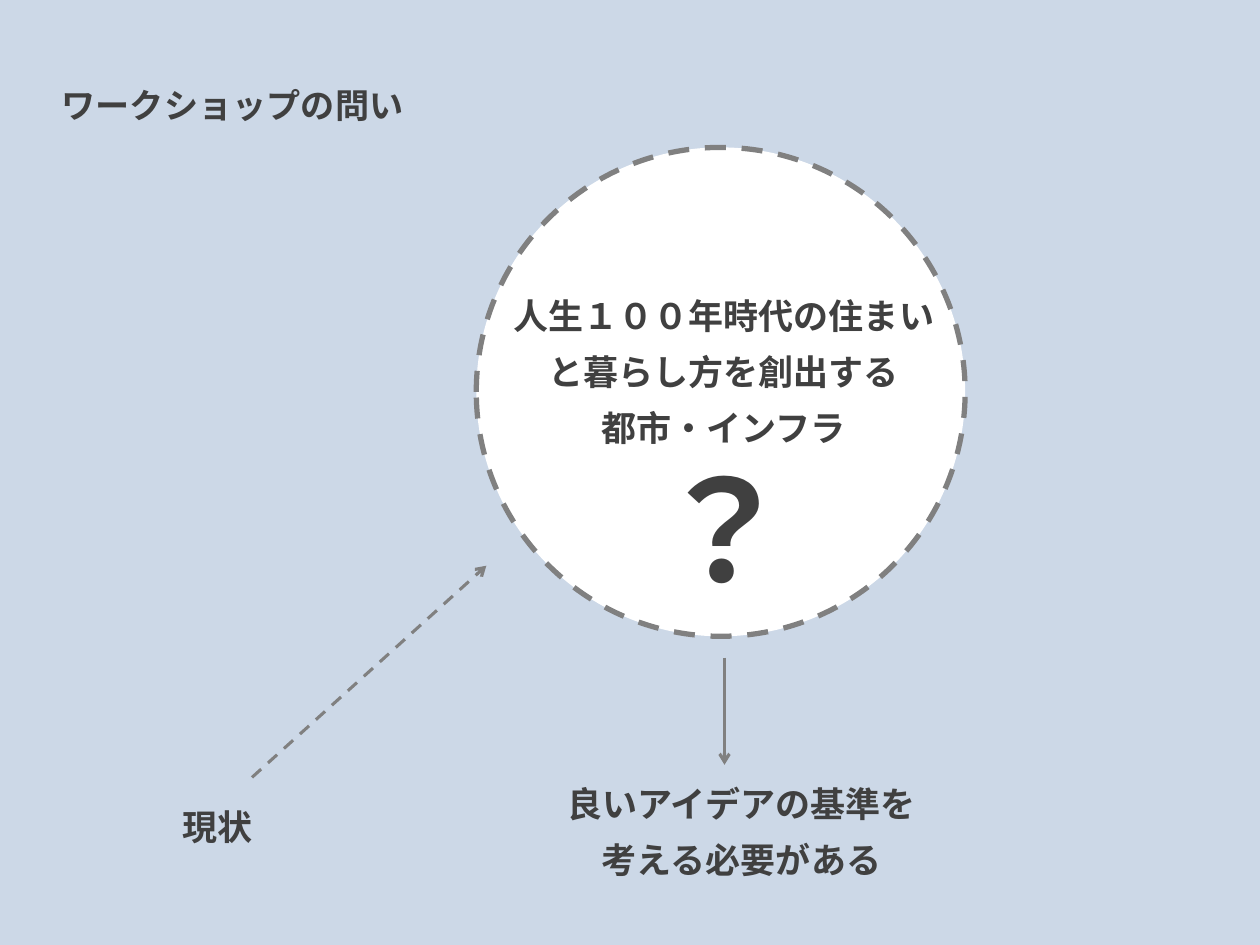
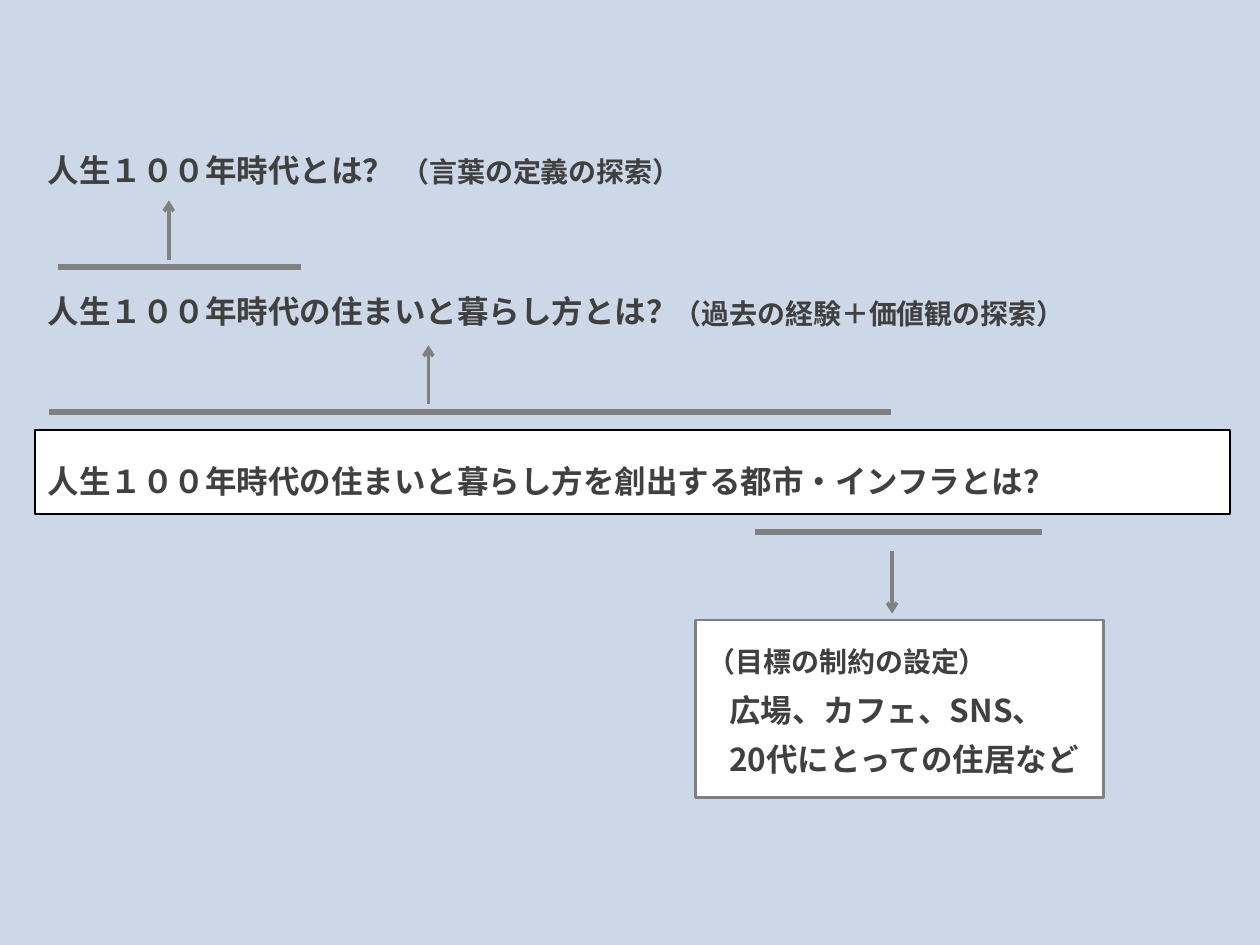
from pptx import Presentation
from pptx.dml.color import RGBColor
from pptx.enum.dml import MSO_LINE
from pptx.enum.shapes import MSO_CONNECTOR, MSO_SHAPE
from pptx.enum.text import MSO_ANCHOR, MSO_AUTO_SIZE, PP_ALIGN
from pptx.oxml.ns import qn
from pptx.util import Inches, Pt
from lxml.etree import SubElement

FONT = "Noto Sans CJK JP"
SKY = RGBColor(0xCC, 0xD8, 0xE7)
WHITE = RGBColor(0xFF, 0xFF, 0xFF)
BLACK = RGBColor(0, 0, 0)
GRAY = RGBColor(0x80, 0x80, 0x80)
INK = RGBColor(0x40, 0x40, 0x40)


def write(page, area, *lines, size=20, spacing=Pt(32), align=PP_ALIGN.LEFT,
          anchor=MSO_ANCHOR.MIDDLE, box=None):
    """Put one paragraph per line into box, or into a new text box, at area."""
    position = [Inches(length) for length in area]
    if box is None:
        box = page.shapes.add_textbox(*position)
    box.left, box.top, box.width, box.height = position
    frame = box.text_frame
    frame.word_wrap = True
    frame.auto_size = MSO_AUTO_SIZE.NONE
    frame.vertical_anchor = anchor
    for index, line in enumerate(lines):
        para = frame.add_paragraph() if index else frame.paragraphs[0]
        para.text = line
        para.alignment = align
        para.line_spacing = spacing
        para.space_before = Pt(0)
        for span in para.runs:
            span.font.size = Pt(size)
            span.font.bold = True
            span.font.name = FONT
            span.font.color.rgb = INK
            SubElement(span.font._element, qn("a:ea"), typeface=FONT)
    return box


def draw_line(page, start, end, width, arrow=False, dashed=False):
    line = page.shapes.add_connector(
        MSO_CONNECTOR.STRAIGHT, *[Inches(length) for length in start + end])
    line.line.color.rgb = GRAY
    line.line.width = Pt(width)
    if dashed:
        line.line.dash_style = MSO_LINE.DASH
    if arrow:
        SubElement(line.line._get_or_add_ln(), qn("a:tailEnd"), type="arrow")
    SubElement(line._element.spPr, qn("a:effectLst"))


deck = Presentation()
deck.slide_width, deck.slide_height = Inches(10), Inches(7.5)
background = deck.slide_master.background.fill
background.solid()
background.fore_color.rgb = SKY
title_only = deck.slide_layouts[5]

# Slide 1: the workshop question
page = deck.slides.add_slide(title_only)
circle = page.shapes.add_shape(
    MSO_SHAPE.OVAL, Inches(3.78), Inches(1.17), Inches(3.88), Inches(3.88))
circle.shadow.inherit = False
circle.fill.solid()
circle.fill.fore_color.rgb = WHITE
circle.line.color.rgb = GRAY
circle.line.width = Pt(3)
circle.line.dash_style = MSO_LINE.DASH
page.shapes.title._element.addprevious(circle._element)  # circle behind title

write(page, (3.86, 2.09, 3.77, 1.61),
      "人生１００年時代の住まいと暮らし方を創出する\v都市・インフラ",
      align=PP_ALIGN.CENTER, box=page.shapes.title)
write(page, (0.39, 0.43, 6.95, 0.74), "ワークショップの問い", size=19.5, spacing=1.2)
write(page, (5.09, 3.76, 1.01, 1.72), "？", size=80)
write(page, (1.35, 6.38, 0.79, 0.33), "現状", spacing=0.9, anchor=MSO_ANCHOR.TOP)
write(page, (4, 5.74, 3.77, 1.61), "良いアイデアの基準を", "考える必要がある",
      align=PP_ALIGN.CENTER)
draw_line(page, (2, 6.17), (3.86, 4.49), 1.75, arrow=True, dashed=True)
draw_line(page, (5.75, 5.22), (5.75, 6.07), 1.75, arrow=True)

# Slide 2: the question taken apart
page = deck.slides.add_slide(title_only)
question = write(page, (0.28, 3.41, 9.48, 0.67),
                 "人生１００年時代の住まいと暮らし方を創出する都市・インフラとは？",
                 size=18, box=page.shapes.title)
constraint = page.shapes.add_shape(
    MSO_SHAPE.RECTANGLE, Inches(5.52), Inches(4.92), Inches(3.24), Inches(1.41))
constraint.shadow.inherit = False
for panel, color, width in ((question, BLACK, 1), (constraint, GRAY, 1.5)):
    panel.fill.solid()
    panel.fill.fore_color.rgb = WHITE
    panel.line.color.rgb = color
    panel.line.width = Pt(width)

for top, text in ((2.06, "人生１００年時代の住まいと暮らし方とは？"),
                  (0.94, "人生１００年時代とは？")):
    write(page, (0.28, top, 9.48, 0.67), text, size=18)
for left, top, width, text, align in (
        (5.02, 2.16, 3.76, "（過去の経験＋価値観の探索）", PP_ALIGN.CENTER),
        (2.83, 1.03, 2.93, "（言葉の定義の探索）", PP_ALIGN.CENTER),
        (5.52, 4.92, 2.51, "（目標の制約の設定）", PP_ALIGN.LEFT)):
    write(page, (left, top, width, 0.48), text, size=16, align=align)
write(page, (5.69, 5.24, 3.16, 1.08), "広場、カフェ、SNS、", "20代にとっての住居など",
      size=18, spacing=Pt(28))

# Each bar marks a phrase; its arrow leads to the matching question
for left, right, bar_y, arrow_x, arrow_start, arrow_end in (
        (0.39, 7.07, 3.27, 3.4, 3.21, 2.74),
        (0.46, 2.39, 2.12, 1.34, 2.06, 1.59),
        (5.99, 8.27, 4.22, 7.08, 4.37, 4.87)):
    draw_line(page, (left, bar_y), (right, bar_y), 3.5)
    draw_line(page, (arrow_x, arrow_start), (arrow_x, arrow_end), 2, arrow=True)

deck.save("out.pptx")
